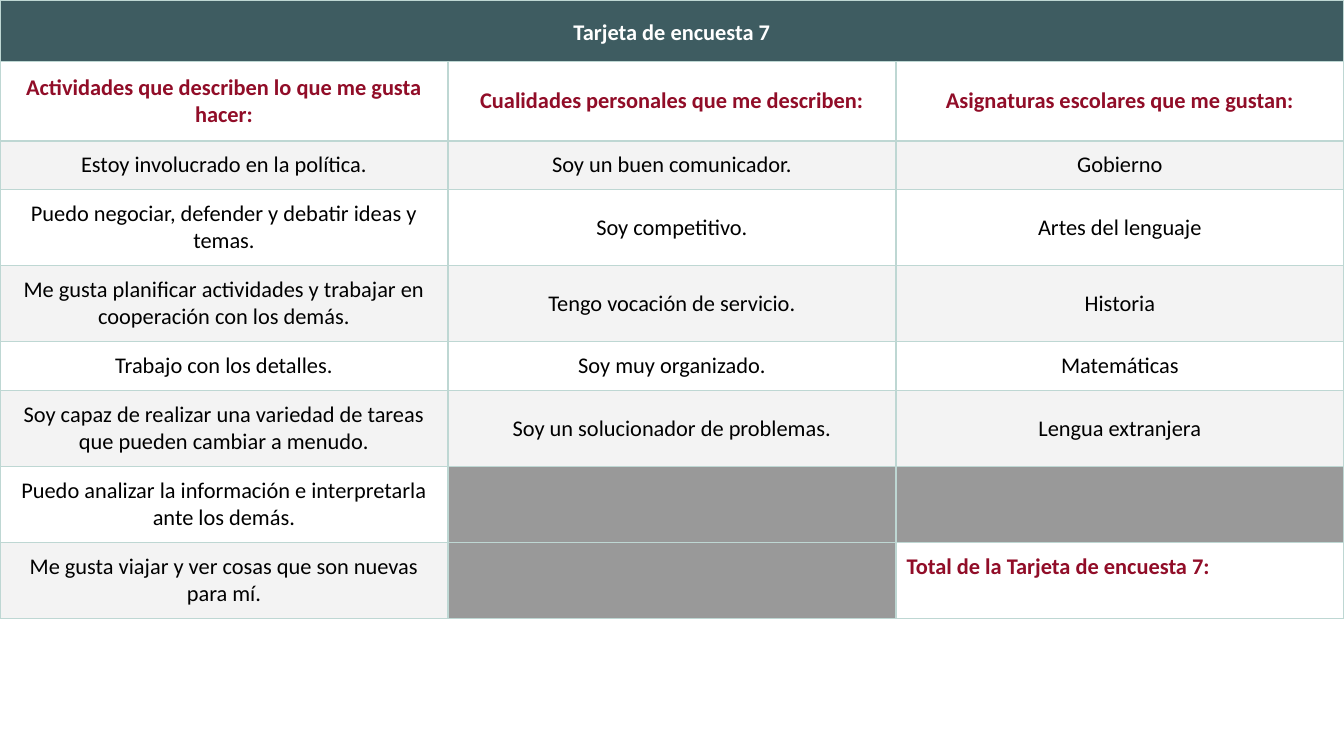
from dataclasses import dataclass

from pptx import Presentation
from pptx.dml.color import RGBColor
from pptx.enum.text import MSO_ANCHOR as Anchor, PP_ALIGN as Align
from pptx.oxml import parse_xml
from pptx.oxml.ns import nsdecls
from pptx.util import Pt


@dataclass(frozen=True)
class Theme:
    font: str = "Calibri"
    size: float = 12
    inset: float = 5.75
    border: str = "BED7D3"
    banner: str = "3E5C61"
    accent: str = "910D28"
    text: str = "000000"
    white: str = "FFFFFF"
    band: str = "F3F3F3"
    blocked: str = "999999"


THEME = Theme()
WIDTH, HEIGHT = 720, 405
TITLE = "Tarjeta de encuesta 7"
TOTAL = "Total de la Tarjeta de encuesta 7:"
HEADERS = [
    "Actividades que describen lo que me gusta hacer:",
    "Cualidades personales que me describen:",
    "Asignaturas escolares que me gustan:",
]
ANSWERS = [
    ["Estoy involucrado en la política.", "Soy un buen comunicador.", "Gobierno"],
    ["Puedo negociar, defender y debatir ideas y temas.", "Soy competitivo.",
     "Artes del lenguaje"],
    ["Me gusta planificar actividades y trabajar en cooperación con los demás.",
     "Tengo vocación de servicio.", "Historia"],
    ["Trabajo con los detalles.", "Soy muy organizado.", "Matemáticas"],
    ["Soy capaz de realizar una variedad de tareas que pueden cambiar a menudo.",
     "Soy un solucionador de problemas.", "Lengua extranjera"],
    ["Puedo analizar la información e interpretarla ante los demás.", None, None],
    ["Me gusta viajar y ver cosas que son nuevas para mí.", None, TOTAL],
]
BANNER_H, HEADER_H, ONE_LINE_H, TWO_LINE_H = 33, 42.5, 25.2, 38.9
SHORT_ANSWERS = (0, 3)


def write(cell, text, color=THEME.text, bold=False, align=Align.CENTER,
          anchor=Anchor.MIDDLE, before=0, after=0, spacing=None):
    cell.vertical_anchor = anchor
    p = cell.text_frame.paragraphs[0]
    p.alignment = align
    p.space_before, p.space_after = Pt(before), Pt(after)
    p.line_spacing = spacing
    r = p.add_run()
    r.text = text
    r.font.name, r.font.size, r.font.bold = THEME.font, Pt(THEME.size), bold
    r.font.color.rgb = RGBColor.from_string(color)


def paint(cell, color=None):
    if color:
        cell.fill.solid()
        cell.fill.fore_color.rgb = RGBColor.from_string(color)
    else:
        cell.fill.background()


def frame(cell):
    cell.margin_left = cell.margin_right = Pt(THEME.inset)
    cell.margin_top = cell.margin_bottom = Pt(THEME.inset)
    tc_pr = cell._tc.get_or_add_tcPr()
    for side in ("lnL", "lnR", "lnT", "lnB"):
        tc_pr.append(parse_xml(
            f'<a:{side} {nsdecls("a")} w="{Pt(1)}"><a:solidFill>'
            f'<a:srgbClr val="{THEME.border}"/></a:solidFill></a:{side}>'))


def add_grid(slide, heights, columns):
    shape = slide.shapes.add_table(len(heights), columns, 0, 0,
                                   Pt(WIDTH), Pt(sum(heights)))
    table = shape.table
    table.first_row = table.horz_banding = False
    for row, height in zip(table.rows, heights):
        row.height = Pt(height)
    for cell in table.iter_cells():
        frame(cell)
    return table


def fill_headings(table):
    banner = table.cell(0, 0)
    banner.merge(table.cell(0, len(HEADERS) - 1))
    paint(banner, THEME.banner)
    write(banner, TITLE, color=THEME.white, bold=True, after=6, spacing=1.15)
    for col, header in enumerate(HEADERS):
        cell = table.cell(1, col)
        paint(cell)
        write(cell, header, color=THEME.accent, bold=True, before=10)


def fill_answers(table):
    for i, answers in enumerate(ANSWERS):
        for col, answer in enumerate(answers):
            cell = table.cell(i + 2, col)
            if answer is None:
                paint(cell, THEME.blocked)
            elif answer == TOTAL:
                paint(cell, THEME.white)
                write(cell, answer, color=THEME.accent, bold=True,
                      align=Align.LEFT, anchor=Anchor.TOP, before=10)
            else:
                paint(cell, THEME.band if i % 2 == 0 else None)
                write(cell, answer)


def main():
    prs = Presentation()
    prs.slide_width, prs.slide_height = Pt(WIDTH), Pt(HEIGHT)
    slide = prs.slides.add_slide(prs.slide_layouts[6])
    heights = [BANNER_H, HEADER_H] + [
        ONE_LINE_H if i in SHORT_ANSWERS else TWO_LINE_H
        for i in range(len(ANSWERS))]
    table = add_grid(slide, heights, len(HEADERS))
    fill_headings(table)
    fill_answers(table)
    prs.save("out.pptx")


if __name__ == "__main__":
    main()
